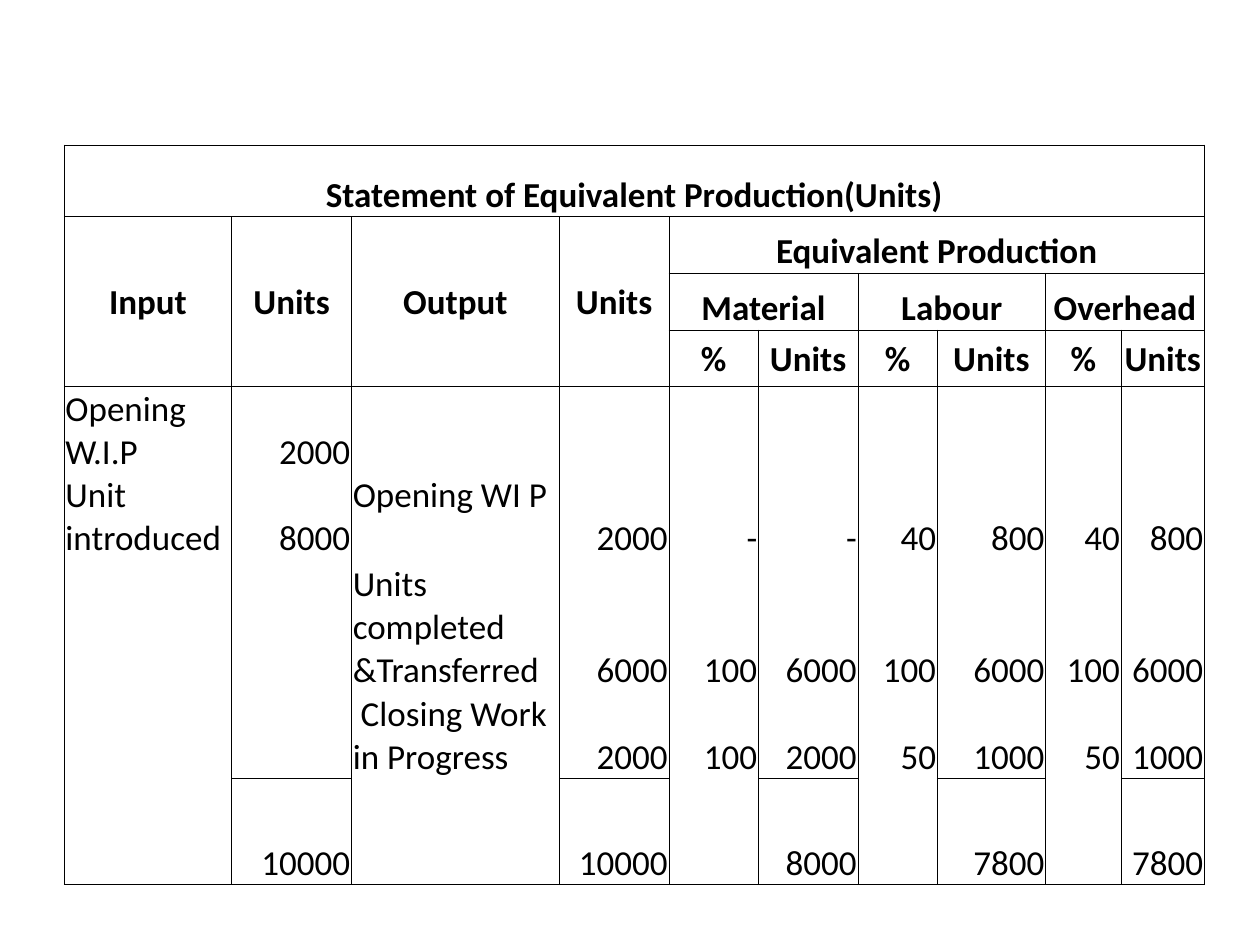
from pptx import Presentation
from pptx.dml.color import RGBColor
from pptx.enum.text import MSO_ANCHOR, PP_ALIGN
from pptx.oxml.ns import qn
from pptx.util import Inches, Pt
from lxml import etree

LEFT, CENTER, RIGHT = PP_ALIGN.LEFT, PP_ALIGN.CENTER, PP_ALIGN.RIGHT
MIDDLE, BOTTOM = MSO_ANCHOR.MIDDLE, MSO_ANCHOR.BOTTOM

THEME = {"font": "Calibri", "size": Pt(20), "ink": "000000",
         "line": Pt(0.5), "gap": Pt(24.4)}

COLUMN_WIDTHS = [1.33, 0.95, 1.65, 0.87, 0.71, 0.79, 0.63, 0.86, 0.6, 0.66]
ROW_HEIGHTS = [0.57, 0.45, 0.45, 0.45, 0.99, 1.05, 0.66, 0.84]
HEADER_ROWS = 4
LAST_ROW = len(ROW_HEIGHTS) - 1
TEXT_COLUMNS = (0, 2)

HEADERS = [
    (0, 0, 1, 10, "Statement of Equivalent Production(Units)", BOTTOM),
    (1, 0, 3, 1, "Input", MIDDLE),
    (1, 1, 3, 1, "Units", MIDDLE),
    (1, 2, 3, 1, "Output", MIDDLE),
    (1, 3, 3, 1, "Units", MIDDLE),
    (1, 4, 1, 6, "Equivalent Production", BOTTOM),
]
for index, name in enumerate(["Material", "Labour", "Overhead"]):
    column = 4 + 2 * index
    HEADERS += [(2, column, 1, 2, name, BOTTOM),
                (3, column, 1, 1, "%", MIDDLE),
                (3, column + 1, 1, 1, "Units", MIDDLE)]

BODY = [
    ["Opening W.I.P\nUnit introduced", "2000\n8000", "Opening WI P",
     "2000", "-", "-", "40", "800", "40", "800"],
    ["", "", "Units completed &Transferred",
     "6000", "100", "6000", "100", "6000", "100", "6000"],
    ["", "", " Closing Work in Progress",
     "2000", "100", "2000", "50", "1000", "50", "1000"],
    ["", "10000", "", "10000", "", "8000", "", "7800", "", "7800"],
]


def write_cell(cell, text, align, anchor, bold):
    cell.vertical_anchor = anchor
    cell.text_frame.text = text
    for para in cell.text_frame.paragraphs:
        para.alignment = align
        para.font.size = THEME["size"]
        for span in para.runs:
            span.font.name = THEME["font"]
            span.font.size = THEME["size"]
            span.font.bold = bold
            span.font.color.rgb = RGBColor.from_string(THEME["ink"])


def draw_borders(cell, edges):
    properties = cell._tc.get_or_add_tcPr()
    for side in "LRTB":
        line = etree.SubElement(properties, qn(f"a:ln{side}"), w=str(THEME["line"]))
        if side in edges:
            fill = etree.SubElement(line, qn("a:solidFill"))
            etree.SubElement(fill, qn("a:srgbClr"), val=THEME["ink"])
        else:
            etree.SubElement(line, qn("a:noFill"))


deck = Presentation()
deck.slide_width, deck.slide_height = Inches(10), Inches(7.5)
page = deck.slides.add_slide(deck.slide_layouts[6])

frame = page.shapes.add_table(
    len(ROW_HEIGHTS), len(COLUMN_WIDTHS), Inches(0.51), Inches(1.15),
    Inches(sum(COLUMN_WIDTHS)), Inches(sum(ROW_HEIGHTS)))
table = frame.table
table.first_row = False
table.horz_banding = False
for column, width in zip(table.columns, COLUMN_WIDTHS):
    column.width = Inches(width)
for row, height in zip(table.rows, ROW_HEIGHTS):
    row.height = Inches(height)

for row in range(len(ROW_HEIGHTS)):
    for column in range(len(COLUMN_WIDTHS)):
        cell = table.cell(row, column)
        cell.margin_left = cell.margin_right = cell.margin_top = Inches(0.01)
        cell.margin_bottom = 0
        is_total_column = column % 2 == 1
        edges = "LR"
        if row <= HEADER_ROWS or (row == LAST_ROW and is_total_column):
            edges += "T"
        if row < HEADER_ROWS or row == LAST_ROW or (
                row == LAST_ROW - 1 and is_total_column):
            edges += "B"
        draw_borders(cell, edges)
        cell.fill.background()

for row, column, height, width, text, anchor in HEADERS:
    cell = table.cell(row, column)
    if height * width > 1:
        cell.merge(table.cell(row + height - 1, column + width - 1))
    write_cell(cell, text, CENTER, anchor, True)

for row, values in enumerate(BODY, start=HEADER_ROWS):
    for column, text in enumerate(values):
        align = LEFT if column in TEXT_COLUMNS else RIGHT
        write_cell(table.cell(row, column), text, align, BOTTOM, False)

for para in table.cell(HEADER_ROWS, 1).text_frame.paragraphs:
    para.space_before = THEME["gap"]
table.cell(HEADER_ROWS, 2).margin_bottom = Inches(0.34)

deck.save("out.pptx")
